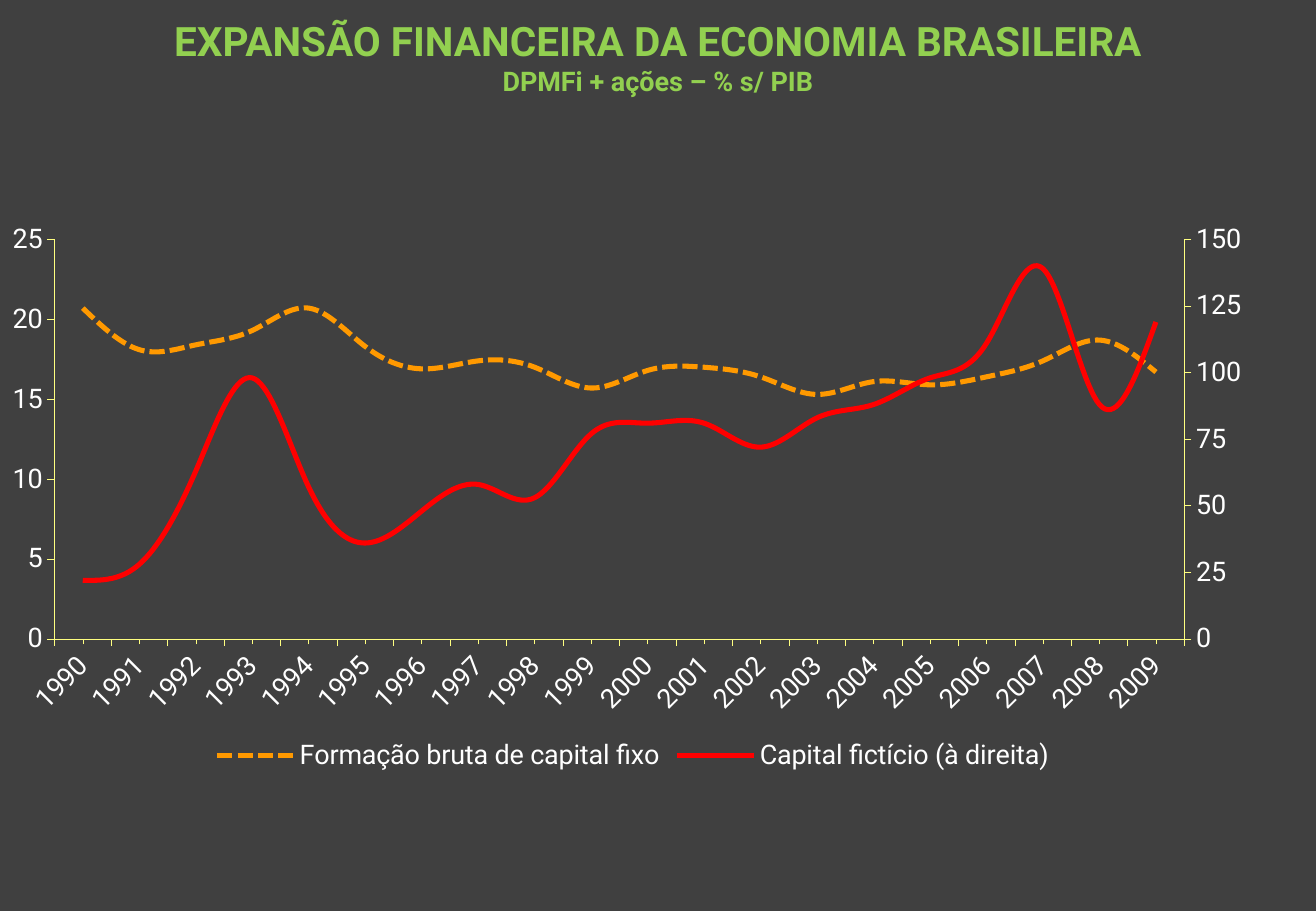
from copy import deepcopy

from lxml.etree import SubElement
from pptx import Presentation
from pptx.chart.axis import CategoryAxis, ValueAxis
from pptx.chart.data import CategoryChartData
from pptx.dml.color import RGBColor
from pptx.enum.chart import XL_CHART_TYPE as ChartType
from pptx.enum.chart import XL_LEGEND_POSITION as LegendPos
from pptx.enum.chart import XL_MARKER_STYLE as Marker
from pptx.enum.chart import XL_TICK_LABEL_POSITION as LabelPos
from pptx.enum.chart import XL_TICK_MARK as Tick
from pptx.enum.dml import MSO_LINE_DASH_STYLE as Dash
from pptx.enum.text import PP_ALIGN
from pptx.oxml.ns import qn
from pptx.util import Cm, Pt

FONT = "Roboto"
BACKGROUND = RGBColor(0x40, 0x40, 0x40)
GREEN = RGBColor(0x92, 0xD0, 0x50)
WHITE = RGBColor(0xFF, 0xFF, 0xFF)
AXIS_YELLOW = RGBColor(0xFF, 0xFF, 0x80)
ORANGE = RGBColor(0xFF, 0x99, 0x00)
RED = RGBColor(0xFF, 0x00, 0x00)

FIXED_CAPITAL = [20.7, 18.1, 18.4, 19.3, 20.7, 18.3, 16.9, 17.4, 17, 15.7,
                 16.8, 17, 16.4, 15.3, 16.1, 15.9, 16.4, 17.4, 18.7, 16.7]
FICTITIOUS_CAPITAL = [22, 28, 63, 98, 57, 36, 48, 58, 53, 77,
                      81, 81, 72, 83, 88, 98, 111, 139, 88, 119]
PLOT_LAYOUT = {"layoutTarget": "inner", "xMode": "edge", "yMode": "edge",
               "x": 0.035, "y": 0.064, "w": 0.908, "h": 0.697}


def style_font(font, size=16, color=WHITE, bold=False):
    """Set the typeface, size, colour and weight of a font."""
    font.name, font.size, font.bold = FONT, Pt(size), bold
    font.color.rgb = color


def add_text(p, text, **style):
    """Write a centred run into a paragraph."""
    p.alignment = PP_ALIGN.CENTER
    r = p.add_run()
    r.text = text
    style_font(r.font, **style)


def add_title(slide):
    """Add the heading and its subtitle."""
    tf = slide.shapes.add_textbox(0, Cm(0.21), Cm(27.51), Cm(1.96)).text_frame
    tf.word_wrap = True
    add_text(tf.paragraphs[0], "EXPANSÃO FINANCEIRA DA ECONOMIA BRASILEIRA",
             size=24, color=GREEN, bold=True)
    add_text(tf.add_paragraph(), "DPMFi + ações – % s/ PIB", color=GREEN, bold=True)


def style_axis(axis):
    """Give an axis its line, ticks and label font."""
    axis.has_major_gridlines = False
    axis.major_tick_mark = Tick.OUTSIDE
    axis.format.line.color.rgb = AXIS_YELLOW
    axis.format.line.width = Pt(0.25)
    style_font(axis.tick_labels.font)


def set_scale(axis, top, step):
    """Set a value axis from zero to top in equal steps."""
    axis.minimum_scale, axis.maximum_scale, axis.major_unit = 0, top, step
    axis.tick_labels.number_format = "0"
    axis.tick_labels.number_format_is_linked = False


def style_series(s, color, dash=None):
    """Draw a series as a smooth line without markers."""
    s.smooth = True
    s.marker.style = Marker.NONE
    s.format.line.color.rgb = color
    s.format.line.width = Pt(3)
    if dash:
        s.format.line.dash_style = dash


def set_plot_layout(plot_area):
    """Fix the inner plot rectangle as fractions of the chart."""
    for old in plot_area.findall(qn("c:layout")):
        plot_area.remove(old)
    layout = SubElement(plot_area, qn("c:layout"))
    plot_area.insert(0, layout)
    manual = SubElement(layout, qn("c:manualLayout"))
    for name, value in PLOT_LAYOUT.items():
        SubElement(manual, qn(f"c:{name}")).set("val", str(value))


def add_right_axis(chart):
    """Move the last series to a second value axis and return that axis."""
    left_plot = chart.plots[0]._element
    right_plot = deepcopy(left_plot)
    left_plot.addnext(right_plot)
    left_plot.remove(left_plot.findall(qn("c:ser"))[-1])
    right_plot.remove(right_plot.findall(qn("c:ser"))[0])

    cat, val = chart.category_axis._element, chart.value_axis._element
    right_cat, right_val = deepcopy(cat), deepcopy(val)
    val.addnext(right_val)
    right_val.addnext(right_cat)
    new_ids = {cat.find(qn("c:axId")).get("val"): "50010",
               val.find(qn("c:axId")).get("val"): "50020"}
    for part in (right_plot, right_cat, right_val):
        for tag in ("c:axId", "c:crossAx"):
            for node in part.findall(qn(tag)):
                node.set("val", new_ids[node.get("val")])
    right_val.find(qn("c:axPos")).set("val", "r")
    right_val.find(qn("c:crosses")).set("val", "max")
    CategoryAxis(right_cat).visible = False
    return ValueAxis(right_val)


def add_line_chart(slide):
    """Add the line chart with its left and right scales."""
    data = CategoryChartData()
    data.categories = [str(year) for year in range(1990, 2010)]
    data.add_series("Formação bruta de capital fixo", FIXED_CAPITAL)
    data.add_series("Capital fictício (à direita)", FICTITIOUS_CAPITAL)
    chart = slide.shapes.add_chart(ChartType.LINE, Cm(0.23), Cm(4.24),
                                   Cm(26.01), Cm(11.99), data).chart
    style_font(chart.font)
    chart.has_title = False
    chart.has_legend = True
    chart.legend.position = LegendPos.BOTTOM
    chart.legend.include_in_layout = False
    style_font(chart.legend.font)

    plot = chart.plots[0]
    plot.vary_by_categories = False
    style_series(plot.series[0], ORANGE, Dash.SQUARE_DOT)
    style_series(plot.series[1], RED)

    years = chart.category_axis
    style_axis(years)
    years.minor_tick_mark = Tick.OUTSIDE
    years.tick_label_position = LabelPos.LOW
    years._element.find(qn("c:txPr")).find(qn("a:bodyPr")).set("rot", "-2700000")
    style_axis(chart.value_axis)
    set_scale(chart.value_axis, 25, 5)
    set_scale(add_right_axis(chart), 150, 25)
    set_plot_layout(plot._element.getparent())


def main():
    """Build the slide and save it."""
    prs = Presentation()
    prs.slide_width, prs.slide_height = Cm(27.51), Cm(19.05)
    slide = prs.slides.add_slide(prs.slide_layouts[6])
    slide.background.fill.solid()
    slide.background.fill.fore_color.rgb = BACKGROUND
    add_line_chart(slide)
    add_title(slide)
    prs.save("out.pptx")


if __name__ == "__main__":
    main()
